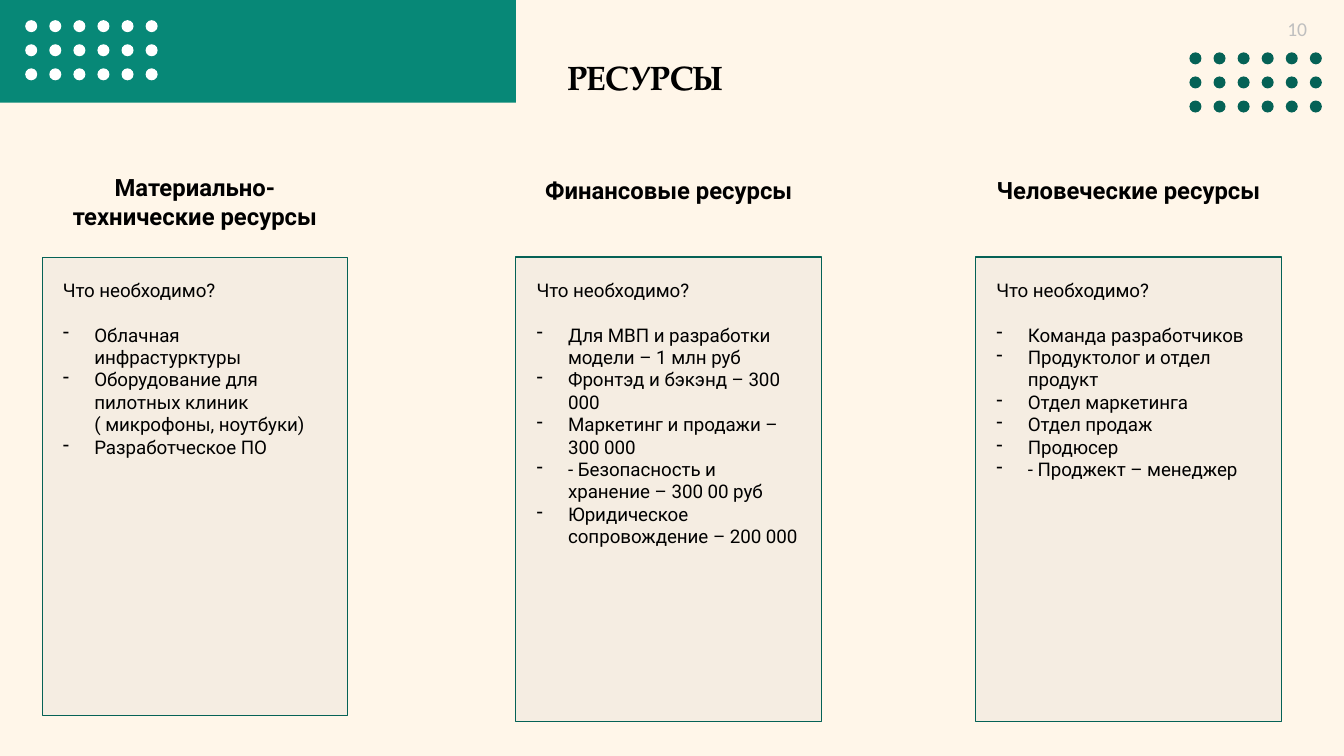
from dataclasses import dataclass

from lxml import etree
from pptx import Presentation
from pptx.dml.color import RGBColor
from pptx.enum import shapes, text
from pptx.oxml import ns
from pptx.util import Pt

COLORS = {
    "cream": "FFF6E9",
    "teal": "078877",
    "deep": "056256",
    "grey": "BFBFBF",
    "white": "FFFFFF",
    "black": "000000",
}
BODY_FONT = "Roboto"
TITLE_FONT = "TeX Gyre Pagella"
NUMBER_FONT = "Calibri"

DOT_SIZE, DOT_STEP, DOT_COLUMNS, DOT_ROWS = 8.6, 17.2, 6, 3
CARD_TOP, CARD_WIDTH = 183.6, 218.2
BODY_TOP, BODY_WIDTH, BODY_HEIGHT = 195.8, 203, 309
BODY_SIZE, LINE_GAP, BULLET_INDENT = 13.33, 15.6, 22.5
HEADING_HEIGHT = 28.8
QUESTION = "Что необходимо?"


@dataclass
class Resource:
    heading: str
    left: float
    items: list[str]
    heading_top: float = 121.7
    heading_width: float = 203
    card_height: float = 332


@dataclass
class DotGrid:
    left: float
    top: float
    color: str


RESOURCES = [
    Resource("Материально-технические ресурсы", 30.2, [
        "Облачная инфрастурктуры",
        "Оборудование для пилотных клиник ( микрофоны, ноутбуки)",
        "Разработческое ПО",
    ], heading_top=120.2, heading_width=211, card_height=327.6),
    Resource("Финансовые ресурсы", 368.6, [
        "Для МВП и разработки модели – 1 млн руб",
        "Фронтэд и бэкэнд – 300 000",
        "Маркетинг и продажи – 300 000",
        "- Безопасность и хранение – 300 00 руб",
        "Юридическое сопровождение – 200 000",
    ]),
    Resource("Человеческие ресурсы", 697, [
        "Команда разработчиков",
        "Продуктолог и отдел продукт",
        "Отдел маркетинга",
        "Отдел продаж",
        "Продюсер",
        "- Проджект – менеджер",
    ]),
]
DOT_GRIDS = [DotGrid(849.6, 37.4, "deep"), DotGrid(18, 14.4, "white")]


def rgb(color: str) -> RGBColor:
    return RGBColor.from_string(COLORS[color])


def add_solid(owner, kind, left: float, top: float, width: float, height: float, color: str):
    """Add a filled shape with no outline to a slide or a group."""
    shape = owner.shapes.add_shape(kind, Pt(left), Pt(top), Pt(width), Pt(height))
    shape.shadow.inherit = False
    shape.fill.solid()
    shape.fill.fore_color.rgb = rgb(color)
    shape.line.fill.background()
    return shape


def add_dots(page, grid: DotGrid) -> None:
    group = page.shapes.add_group_shape()
    for row in range(DOT_ROWS):
        for column in range(DOT_COLUMNS):
            add_solid(group, shapes.MSO_SHAPE.OVAL, grid.left + column * DOT_STEP,
                      grid.top + row * DOT_STEP, DOT_SIZE, DOT_SIZE, grid.color)


def add_box(page, left: float, top: float, width: float, height: float):
    box = page.shapes.add_textbox(Pt(left), Pt(top), Pt(width), Pt(height))
    box.text_frame.word_wrap = True
    return box.text_frame


def write(para, words: str, font: str, size: float, color: str = "black",
          bold: bool = False, align=text.PP_ALIGN.LEFT) -> None:
    para.alignment = align
    span = para.add_run()
    span.text = words
    span.font.name = font
    span.font.size = Pt(size)
    span.font.bold = bold
    span.font.color.rgb = rgb(color)


def add_dash(para) -> None:
    """Give the paragraph a hanging dash bullet."""
    props = para._p.get_or_add_pPr()
    props.set("marL", str(Pt(BULLET_INDENT)))
    props.set("indent", str(-Pt(BULLET_INDENT)))
    bullet_color = etree.SubElement(props, ns.qn("a:buClr"))
    etree.SubElement(bullet_color, ns.qn("a:srgbClr"), val=COLORS["black"])
    etree.SubElement(props, ns.qn("a:buChar"), char="-")


def add_card(page, resource: Resource) -> None:
    card = add_solid(page, shapes.MSO_SHAPE.RECTANGLE, resource.left, CARD_TOP,
                     CARD_WIDTH, resource.card_height, "grey")
    fill_color = card.fill._xPr.find(ns.qn("a:solidFill"))[0]
    etree.SubElement(fill_color, ns.qn("a:alpha"), val="15000")
    card.line.color.rgb = rgb("deep")
    card.line.width = Pt(0.75)


def add_resource(page, resource: Resource) -> None:
    """Draw one column: heading, card and list."""
    heading_left = resource.left + (CARD_WIDTH - resource.heading_width) / 2
    heading = add_box(page, heading_left, resource.heading_top,
                      resource.heading_width, HEADING_HEIGHT)
    write(heading.paragraphs[0], resource.heading, BODY_FONT, 17,
          bold=True, align=text.PP_ALIGN.CENTER)

    add_card(page, resource)

    body_left = resource.left + (CARD_WIDTH - BODY_WIDTH) / 2
    body = add_box(page, body_left, BODY_TOP, BODY_WIDTH, BODY_HEIGHT)
    write(body.paragraphs[0], QUESTION, BODY_FONT, BODY_SIZE)
    for index, item in enumerate(resource.items):
        para = body.add_paragraph()
        add_dash(para)
        if index == 0:
            para.space_before = Pt(LINE_GAP)
        write(para, item, BODY_FONT, BODY_SIZE)


def add_title(page) -> None:
    title = page.shapes.title
    title.left, title.top, title.width, title.height = Pt(398.2), Pt(37.4), Pt(149.8), Pt(36)
    frame = title.text_frame
    frame.word_wrap = True
    frame.auto_size = text.MSO_AUTO_SIZE.SHAPE_TO_FIT_TEXT
    frame.vertical_anchor = text.MSO_ANCHOR.TOP
    write(frame.paragraphs[0], "РЕСУРСЫ", TITLE_FONT, 24, bold=True)


def main() -> None:
    deck = Presentation()
    deck.slide_width, deck.slide_height = Pt(960), Pt(540)
    page = deck.slides.add_slide(deck.slide_layouts.get_by_name("Title Only"))
    page.background.fill.solid()
    page.background.fill.fore_color.rgb = rgb("cream")

    add_solid(page, shapes.MSO_SHAPE.RECTANGLE, 0, 0, 368.6, 73.4, "teal")
    add_title(page)
    for grid in DOT_GRIDS:
        add_dots(page, grid)
    number = add_box(page, 900.7, 8.6, 51.8, 19.4)
    write(number.paragraphs[0], "10", NUMBER_FONT, 14, "grey", align=text.PP_ALIGN.CENTER)
    for resource in RESOURCES:
        add_resource(page, resource)

    deck.save("out.pptx")


if __name__ == "__main__":
    main()
